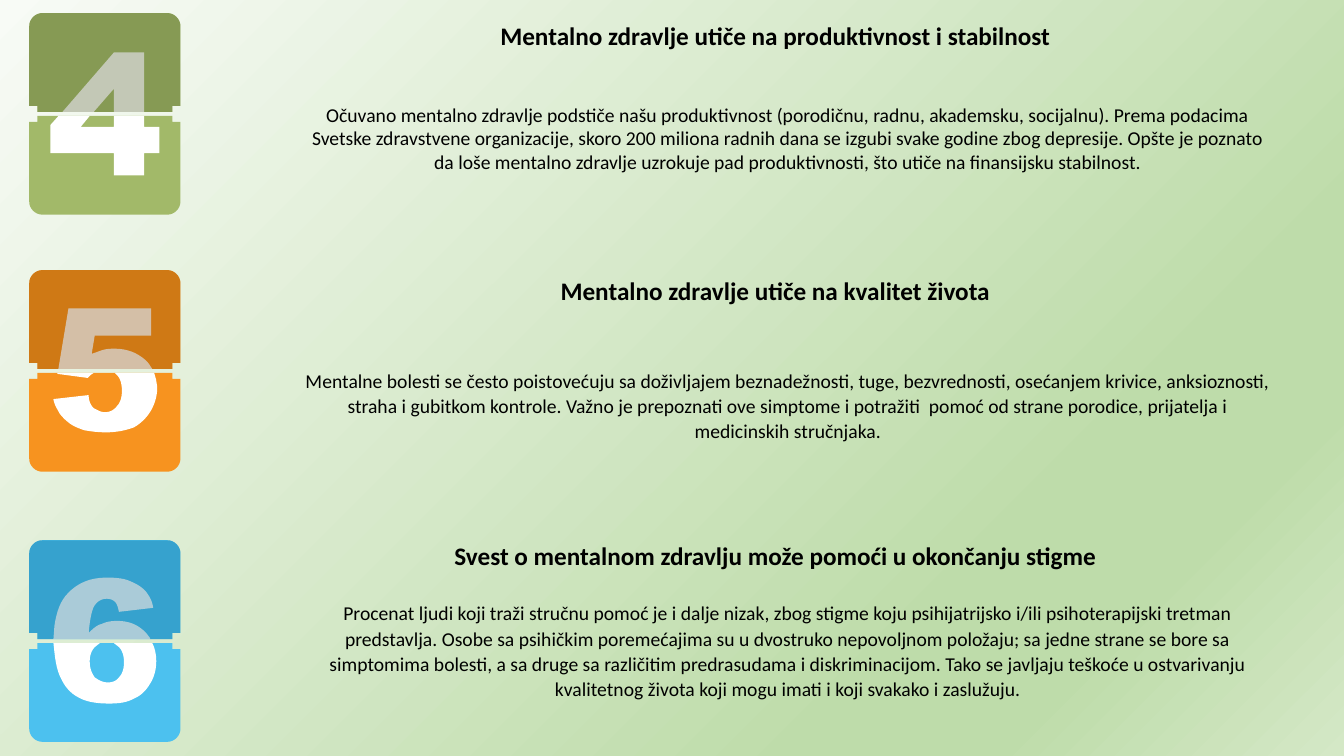
from lxml import etree
from pptx import Presentation
from pptx import util as u
from pptx.dml.color import RGBColor
from pptx.enum import text
from pptx.oxml.ns import qn

COLORS = {
    "text": "000000", "digit": "FFFFFF",
    "green": "A2B969", "green shade": "54632E",
    "orange": "F7931F", "orange shade": "864A05",
    "blue": "4CC1EF", "blue shade": "0D6B91",
}
BACKGROUND_STOPS = [(0, "F8FBF6"), (74, "BEDCAA"), (83, "BEDCAA"), (100, "D4E8C6")]
CARD_LEFT = 0.29
TEXT_LEFT, TEXT_WIDTH = 2.67, 10.04
CURVE_STEPS = 8

# Outlines in hundredths of an inch from the card's top left corner.
# Two numbers are a corner; six are a Bézier curve (two controls, then its end).
UPPER_HALF = [(13, 0), (137, 0), (144, 0, 150, 6, 150, 13), (150, 92), (142, 92), (142, 98),
              (8, 98), (8, 92), (0, 92), (0, 13), (0, 6, 6, 0, 13, 0)]
LOWER_HALF = [tuple(200 - value if i % 2 else value for i, value in enumerate(step))
              for step in UPPER_HALF]
FOUR = [
    [(29, 102), (60, 102), (51, 113), (84, 113), (84, 102), (114, 102), (114, 113), (129, 113),
     (129, 139), (114, 139), (114, 161), (84, 161), (84, 139), (21, 139), (21, 111)],
    [(84, 39), (114, 39), (114, 98), (84, 98), (84, 75), (64, 98), (33, 98)],
]
FIVE = [
    [(85, 102), (124, 102), (126, 109), (126, 111, 127, 114, 127, 117),
     (127, 124, 125, 132, 121, 139), (117, 146, 111, 152, 104, 156),
     (96, 159, 87, 161, 76, 161), (68, 161, 61, 160, 55, 159), (49, 157, 44, 155, 40, 152),
     (36, 149, 33, 146, 30, 142), (28, 138, 25, 134, 24, 128), (59, 124),
     (59, 130, 61, 134, 64, 137), (68, 139, 71, 141, 75, 141), (80, 141, 84, 139, 87, 135),
     (90, 132, 92, 127, 92, 120), (92, 112, 90, 107, 87, 104)],
    [(28, 102), (64, 102), (61, 104), (60, 105, 59, 106, 58, 107), (28, 103)],
    [(39, 38), (121, 38), (121, 65), (65, 65), (62, 83), (66, 82, 70, 80, 74, 79),
     (78, 78, 81, 78, 85, 78), (97, 78, 107, 82, 115, 89), (117, 91, 119, 93, 120, 95),
     (122, 98), (29, 98)],
]
SIX = [
    [(24, 102), (70, 102), (65, 106), (62, 109, 60, 114, 60, 120), (60, 127, 62, 132, 65, 136),
     (69, 139, 73, 141, 78, 141), (82, 141, 86, 140, 89, 136), (92, 133, 94, 128, 94, 121),
     (94, 114, 92, 109, 89, 106), (84, 102), (122, 102), (123, 104),
     (125, 109, 126, 114, 126, 120), (126, 128, 124, 136, 120, 142),
     (116, 149, 111, 154, 104, 157), (97, 161, 89, 162, 79, 162), (66, 162, 56, 160, 49, 156),
     (41, 152, 35, 145, 31, 136), (28, 130, 26, 121, 25, 111)],
    [(77, 37), (87, 37, 95, 38, 101, 41), (106, 43, 111, 46, 115, 50),
     (119, 55, 122, 60, 123, 67), (89, 71), (88, 66, 87, 63, 85, 61), (83, 59, 80, 58, 77, 58),
     (71, 58, 67, 61, 64, 66), (62, 70, 60, 79, 59, 92), (63, 88, 67, 84, 72, 83),
     (76, 81, 81, 80, 87, 80), (98, 80, 107, 83, 115, 91), (117, 93, 118, 95, 120, 97),
     (120, 98), (24, 98), (25, 85), (27, 71, 31, 60, 38, 53), (48, 42, 61, 37, 77, 37)],
]

# Card top, colour, digit, heading top, heading, body top, body height, line spacing, body
SECTIONS = [
    (0.13, "green", FOUR, 0.15, "Mentalno zdravlje utiče na produktivnost i stabilnost",
     0.97, 1.04, 1.0,
     "Očuvano mentalno zdravlje podstiče našu produktivnost (porodičnu, radnu, akademsku, "
     "socijalnu). Prema podacima Svetske zdravstvene organizacije, skoro 200 miliona radnih dana "
     "se izgubi svake godine zbog depresije. Opšte je poznato da loše mentalno zdravlje uzrokuje "
     "pad produktivnosti, što utiče na finansijsku stabilnost."),
    (2.68, "orange", FIVE, 2.68, "Mentalno zdravlje utiče na kvalitet života",
     3.59, 0.84, 1.07,
     "Mentalne bolesti se često poistovećuju sa doživljajem beznadežnosti, tuge, bezvrednosti, "
     "osećanjem krivice, anksioznosti, straha i gubitkom kontrole. Važno je prepoznati ove "
     "simptome i potražiti  pomoć od strane porodice, prijatelja i medicinskih stručnjaka."),
    (5.36, "blue", SIX, 5.31, "Svest o mentalnom zdravlju može pomoći u okončanju stigme",
     5.9, 1.34, 1.07,
     "Procenat ljudi koji traži stručnu pomoć je i dalje nizak, zbog stigme koju psihijatrijsko "
     "i/ili psihoterapijski tretman predstavlja. Osobe sa psihičkim poremećajima su u dvostruko "
     "nepovoljnom položaju; sa jedne strane se bore sa simptomima bolesti, a sa druge sa "
     "različitim predrasudama i diskriminacijom. Tako se javljaju teškoće u ostvarivanju "
     "kvalitetnog života koji mogu imati i koji svakako i zaslužuju."),
]

presentation = Presentation()
presentation.slide_width, presentation.slide_height = u.Inches(13.33), u.Inches(7.5)
slide = presentation.slides.add_slide(presentation.slide_layouts[6])

background = slide.background.fill
background.gradient()
background.gradient_angle = 315
stop_list = slide.element.find(".//" + qn("a:gsLst"))
for stop in list(stop_list):
    stop_list.remove(stop)
for percent, color in BACKGROUND_STOPS:
    stop = etree.SubElement(stop_list, qn("a:gs"), pos=str(percent * 1000))
    etree.SubElement(stop, qn("a:srgbClr"), val=color)


def add_outline(contours, top, color, opacity=100):
    """Draw closed contours as one filled shape, with curves cut into short lines."""
    builder = None
    for contour in contours:
        points = []
        for step in contour:
            if len(step) == 2:
                points.append(step)
                continue
            x0, y0 = points[-1]
            x1, y1, x2, y2, x3, y3 = step
            for i in range(1, CURVE_STEPS + 1):
                t = i / CURVE_STEPS
                a, b, c, d = (1 - t) ** 3, 3 * t * (1 - t) ** 2, 3 * t ** 2 * (1 - t), t ** 3
                points.append((a * x0 + b * x1 + c * x2 + d * x3,
                               a * y0 + b * y1 + c * y2 + d * y3))
        points = [(u.Inches(CARD_LEFT + x / 100), u.Inches(top + y / 100)) for x, y in points]
        if builder is None:
            builder = slide.shapes.build_freeform(*points[0])
        else:
            builder.move_to(*points[0])
        builder.add_line_segments(points[1:], close=True)
    shape = builder.convert_to_shape()
    shape.shadow.inherit = False
    shape.line.fill.background()
    shape.fill.solid()
    shape.fill.fore_color.rgb = RGBColor.from_string(COLORS[color])
    if opacity < 100:
        fill_color = shape.element.spPr.find(qn("a:solidFill"))[0]
        etree.SubElement(fill_color, qn("a:alpha"), val=str(opacity * 1000))


def add_text(content, top, height, size, bold=False, indent=0, spacing=1.0, after=0):
    box = slide.shapes.add_textbox(*map(u.Inches, (TEXT_LEFT, top, TEXT_WIDTH, height)))
    box.text_frame.word_wrap = True
    paragraph = box.text_frame.paragraphs[0]
    paragraph.alignment = text.PP_ALIGN.CENTER
    paragraph.line_spacing = spacing
    paragraph.space_after = u.Pt(after)
    paragraph._p.get_or_add_pPr().set("marL", str(u.Inches(indent)))
    run = paragraph.add_run()
    run.text = content
    run.font.name, run.font.size, run.font.bold = "Calibri", u.Pt(size), bold
    run.font.color.rgb = RGBColor.from_string(COLORS["text"])


for (card_top, color, digit, heading_top, heading,
     body_top, body_height, spacing, body) in SECTIONS:
    add_outline([LOWER_HALF, UPPER_HALF], card_top, color)
    add_outline(digit, card_top, "digit")
    add_outline([UPPER_HALF], card_top, color + " shade", opacity=35)
    add_text(heading, heading_top, 0.4, 18, bold=True)
    add_text(body, body_top, body_height, 14, indent=0.25, spacing=spacing, after=8)

presentation.save("out.pptx")
